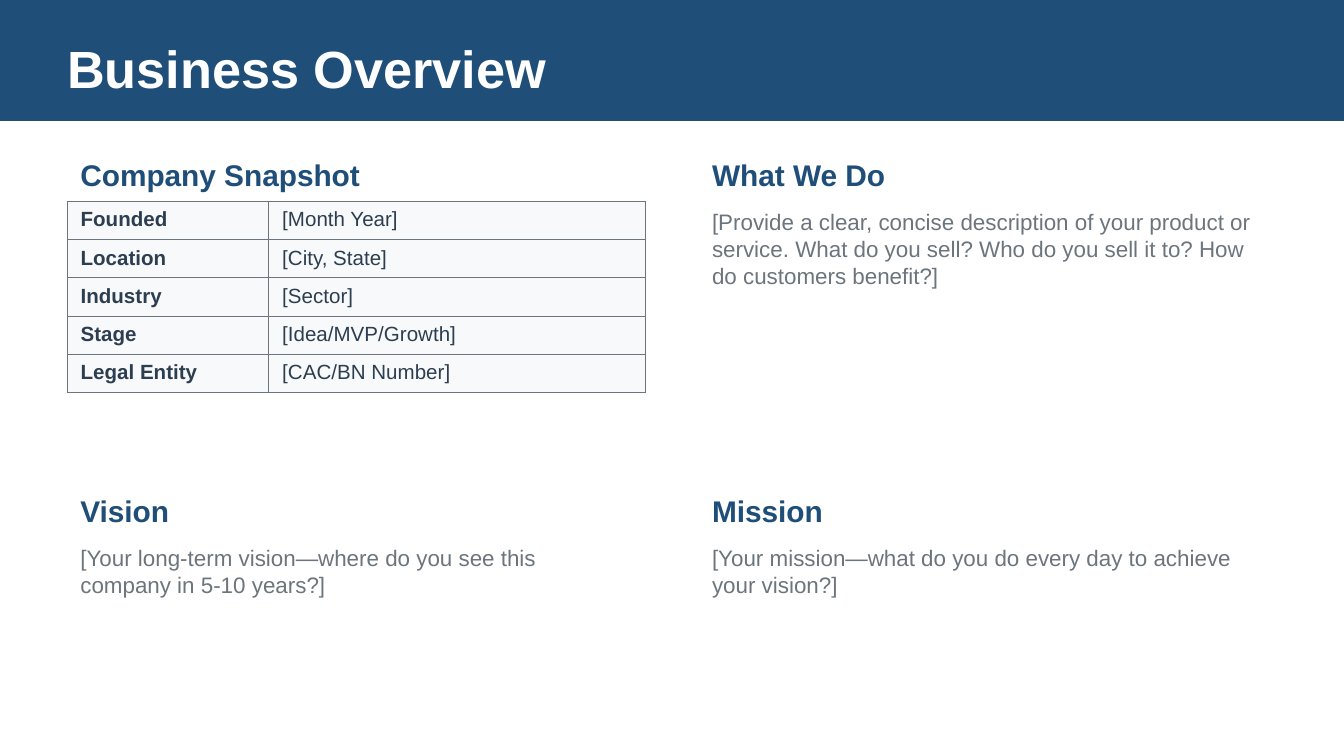
from lxml import etree
from pptx import Presentation
from pptx.dml.color import RGBColor
from pptx.enum.shapes import MSO_SHAPE
from pptx.enum.text import MSO_ANCHOR
from pptx.oxml.ns import qn
from pptx.util import Pt

RECT = MSO_SHAPE.RECTANGLE
TOP, MIDDLE = MSO_ANCHOR.TOP, MSO_ANCHOR.MIDDLE
COLORS = {"navy": "1F4E79", "white": "FFFFFF", "gray": "6C757D",
          "ink": "2C3E50", "pale": "F8F9FA"}
LEFT, RIGHT, COL_W = 36, 374.4, 309.6
ROW_H = 19.5


def write(tf, text, size, color, bold=False):
    p = tf.paragraphs[0]
    p.text = text
    font = p.runs[0].font
    font.name, font.size, font.bold = "Arial", Pt(size), bold
    font.color.rgb = RGBColor.from_string(COLORS[color])


def add_text(box, text, size, color, bold=False, anchor=MIDDLE):
    tf = s.shapes.add_textbox(*map(Pt, box)).text_frame
    tf.word_wrap = True
    tf.vertical_anchor = anchor
    write(tf, text, size, color, bold)
    return tf


prs = Presentation()
prs.slide_width, prs.slide_height = Pt(720), Pt(405)
s = prs.slides.add_slide(prs.slide_layouts[6])

# Title band
band = s.shapes.add_shape(RECT, 0, 0, Pt(720), Pt(64.8))
band.shadow.inherit = False
band.fill.solid()
band.fill.fore_color.rgb = RGBColor.from_string(COLORS["navy"])
band.line.fill.background()
tf = add_text((LEFT, 18, 648, 36), "Business Overview", 28, "white", True)
tf.margin_left = tf.margin_right = tf.margin_top = tf.margin_bottom = 0

# Sections: heading with an optional body below it
sections = [
    (LEFT, 79.2, "Company Snapshot", None, 0),
    (RIGHT, 79.2, "What We Do",
     "[Provide a clear, concise description of your product or service. "
     "What do you sell? Who do you sell it to? How do customers benefit?]", 129.6),
    (LEFT, 259.2, "Vision",
     "[Your long-term vision—where do you see this company in 5-10 years?]", 86.4),
    (RIGHT, 259.2, "Mission",
     "[Your mission—what do you do every day to achieve your vision?]", 86.4),
]
for x, y, heading, body, body_h in sections:
    add_text((x, y, COL_W, 28.8), heading, 16, "navy", True)
    if body:
        add_text((x, y + 28.8, COL_W, body_h), body, 12, "gray", anchor=TOP)

# Company snapshot table
rows = [
    ("Founded", "[Month Year]"),
    ("Location", "[City, State]"),
    ("Industry", "[Sector]"),
    ("Stage", "[Idea/MVP/Growth]"),
    ("Legal Entity", "[CAC/BN Number]"),
]
table = s.shapes.add_table(len(rows), 2, Pt(LEFT), Pt(108), Pt(COL_W),
                           Pt(ROW_H * len(rows))).table
table.first_row = table.horz_banding = False
for column, width in zip(table.columns, (108, 201.6)):
    column.width = Pt(width)
for r, row in enumerate(rows):
    table.rows[r].height = Pt(ROW_H)
    for c, text in enumerate(row):
        cell = table.cell(r, c)
        write(cell.text_frame, text, 11, "ink", bold=c == 0)
        # Borders come before the fill in the cell properties
        tc_pr = cell._tc.get_or_add_tcPr()
        for side in ("a:lnL", "a:lnR", "a:lnT", "a:lnB"):
            ln = etree.SubElement(tc_pr, qn(side), w=str(Pt(0.5)))
            fill = etree.SubElement(ln, qn("a:solidFill"))
            etree.SubElement(fill, qn("a:srgbClr"), val=COLORS["gray"])
        cell.fill.solid()
        cell.fill.fore_color.rgb = RGBColor.from_string(COLORS["pale"])

prs.save("out.pptx")
